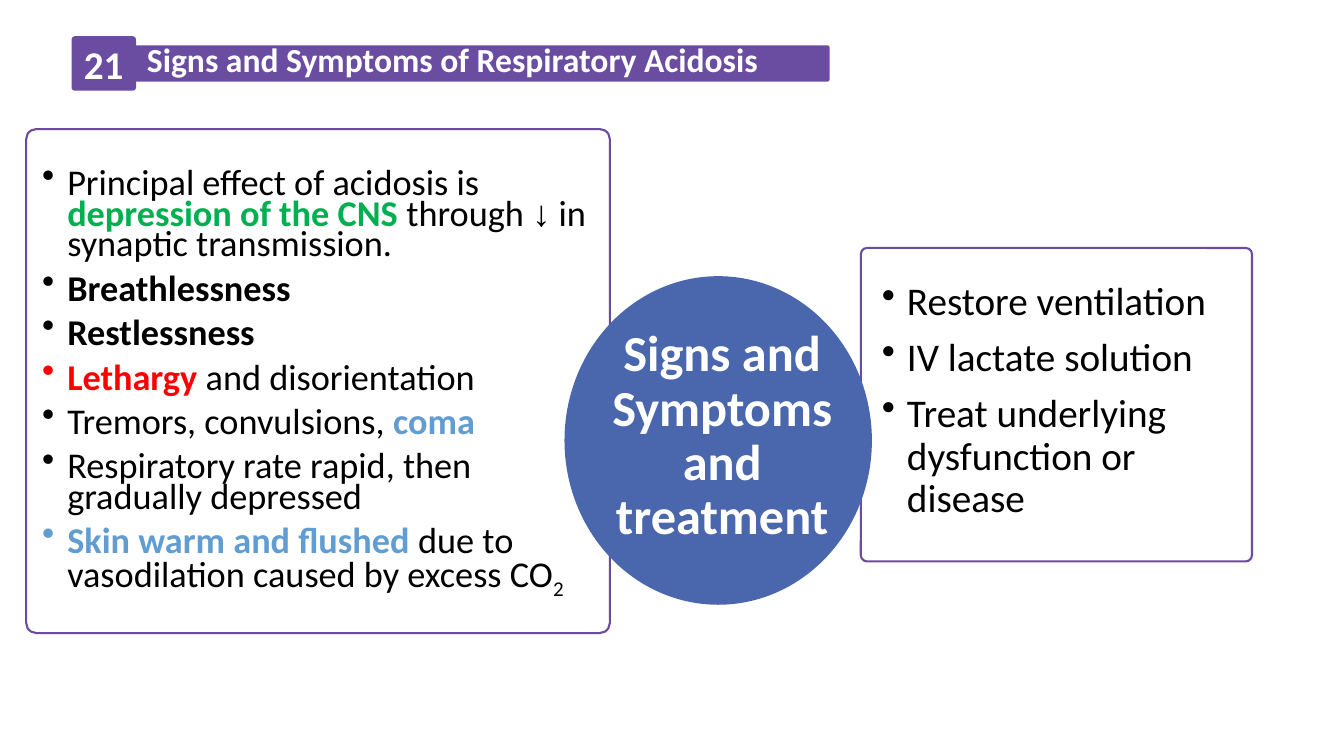
from dataclasses import dataclass, field
from typing import Optional

from lxml.etree import SubElement
from pptx import Presentation
from pptx.dml.color import RGBColor as RGB
from pptx.enum.shapes import MSO_SHAPE as SHAPE
from pptx.enum.text import MSO_ANCHOR as ANCHOR, PP_ALIGN as ALIGN
from pptx.oxml.ns import qn
from pptx.util import Pt

Box = tuple[float, float, float, float]


@dataclass(frozen=True)
class Theme:
    white: str = "FFFFFF"
    black: str = "000000"
    purple: str = "6A4CA1"
    blue: str = "4A66AC"
    sky: str = "629DD1"
    green: str = "00B050"
    red: str = "FF0000"
    font: str = "Calibri"
    arrow_font: str = "Times New Roman"
    signs_size: float = 25.9
    treatment_size: float = 28
    number_size: float = 28
    heading_size: float = 24
    hub_size: float = 36


T = Theme()


@dataclass(frozen=True)
class Run:
    text: str
    color: str = T.black
    bold: bool = False
    font: str = T.font
    baseline: int = 0


@dataclass(frozen=True)
class Panel:
    box: Box
    kind: SHAPE
    fill: str
    line: Optional[str] = None
    corner: Optional[float] = None


@dataclass(frozen=True)
class TextBlock:
    box: Box
    size: float
    paragraphs: list[list[Run]]
    bullets: bool = False
    anchor: ANCHOR = ANCHOR.TOP
    formats: dict = field(default_factory=dict)


PANELS = [
    Panel((614.9, 177.1, 279.4, 223.9), SHAPE.ROUNDED_RECTANGLE, T.white, T.purple, 0.02),
    Panel((18.7, 92.2, 416.9, 360), SHAPE.ROUNDED_RECTANGLE, T.white, T.purple, 0.02),
    Panel((78.5, 32.4, 514.1, 25.9), SHAPE.ROUNDED_RECTANGLE, T.purple, corner=0.06),
    Panel((51.1, 25.9, 46.1, 38.9), SHAPE.ROUNDED_RECTANGLE, T.purple, corner=0.06),
    Panel((403.2, 197.3, 219.6, 234.7), SHAPE.OVAL, T.blue),
]

SIGNS = [
    [Run("Principal effect of acidosis is "),
     Run("depression of the CNS ", T.green, True),
     Run("through "), Run("↓", font=T.arrow_font),
     Run(" in synaptic transmission.")],
    [Run("Breathlessness", bold=True)],
    [Run("Restlessness", bold=True)],
    [Run("Lethargy ", T.red, True), Run("and disorientation")],
    [Run("Tremors, convulsions, "), Run("coma", T.sky, True)],
    [Run("Respiratory rate rapid, then gradually depressed")],
    [Run("Skin warm and flushed ", T.sky, True),
     Run("due to vasodilation caused by excess CO"), Run("2", baseline=-25000)],
]
TREATMENTS = [[Run(text)] for text in (
    "Restore ventilation", "IV lactate solution",
    "Treat underlying dysfunction or disease")]

TEXTS = [
    TextBlock((23, 118.8, 412.6, 333.4), T.signs_size, SIGNS, True,
              formats={"line_spacing": 0.7, "space_before": Pt(10)}),
    TextBlock((51.1, 25.9, 46.1, 38.9), T.number_size, [[Run("21", T.white, True)]],
              anchor=ANCHOR.MIDDLE, formats={"alignment": ALIGN.CENTER}),
    TextBlock((97.9, 38.2, 486.7, 22.3), T.heading_size,
              [[Run("Signs and Symptoms of Respiratory Acidosis", T.white, True)]],
              formats={"line_spacing": Pt(15.2), "space_after": Pt(5)}),
    TextBlock((622.8, 197.3, 271.4, 203.8), T.treatment_size, TREATMENTS, True,
              formats={"line_spacing": 0.9, "space_before": Pt(10)}),
    TextBlock((416.9, 259.9, 198, 104.4), T.hub_size,
              [[Run("Signs and Symptoms and treatment", T.white, True)]],
              anchor=ANCHOR.MIDDLE,
              formats={"alignment": ALIGN.CENTER, "line_spacing": 0.9}),
]


def add_panel(shapes, panel: Panel) -> None:
    sp = shapes.add_shape(panel.kind, *map(Pt, panel.box))
    sp.shadow.inherit = False
    if panel.corner is not None:
        sp.adjustments[0] = panel.corner
    sp.fill.solid()
    sp.fill.fore_color.rgb = RGB.from_string(panel.fill)
    if panel.line:
        sp.line.color.rgb = RGB.from_string(panel.line)
        sp.line.width = Pt(1.5)
    else:
        sp.line.fill.background()


def add_bullet(p) -> None:
    pPr = p._p.get_or_add_pPr()
    pPr.set("marL", str(Pt(18)))
    pPr.set("indent", str(-Pt(18)))
    SubElement(pPr, qn("a:buChar")).set("char", "•")


def add_run(p, run: Run, size: float) -> None:
    r = p.add_run()
    r.text = run.text
    for name, value in {"name": run.font, "size": Pt(size), "bold": run.bold}.items():
        setattr(r.font, name, value)
    r.font.color.rgb = RGB.from_string(run.color)
    if run.baseline:
        r._r.get_or_add_rPr().set("baseline", str(run.baseline))


def add_text(shapes, block: TextBlock) -> None:
    tf = shapes.add_textbox(*map(Pt, block.box)).text_frame
    tf.word_wrap = True
    tf.vertical_anchor = block.anchor
    for i, runs in enumerate(block.paragraphs):
        p = tf.add_paragraph() if i else tf.paragraphs[0]
        if block.bullets:
            add_bullet(p)
        for name, value in block.formats.items():
            if i or name != "space_before":
                setattr(p, name, value)
        for run in runs:
            add_run(p, run, block.size)


def main() -> None:
    prs = Presentation()
    prs.slide_width, prs.slide_height = Pt(960), Pt(540)
    shapes = prs.slides.add_slide(prs.slide_layouts[6]).shapes
    for panel in PANELS:
        add_panel(shapes, panel)
    for block in TEXTS:
        add_text(shapes, block)
    prs.save("out.pptx")


if __name__ == "__main__":
    main()
